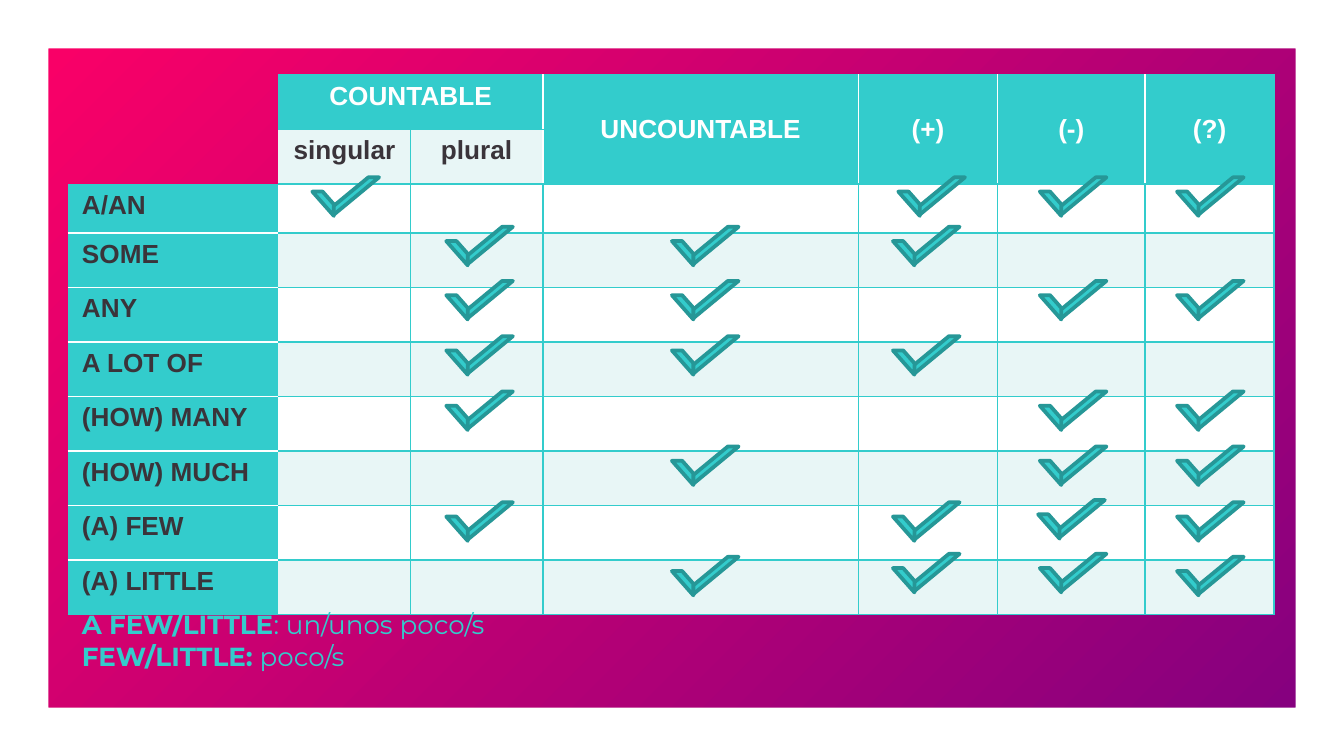
"""Build a quantifier grid slide with check marks for countable and uncountable use."""
from dataclasses import dataclass
from typing import Optional

from lxml.etree import SubElement
from pptx import Presentation
from pptx.dml.color import RGBColor
from pptx.enum.shapes import MSO_SHAPE
from pptx.enum.text import MSO_ANCHOR, MSO_AUTO_SIZE, PP_ALIGN
from pptx.oxml.ns import qn
from pptx.util import Pt

TEAL = RGBColor(0x33, 0xCC, 0xCC)
DARK_TEAL = RGBColor(0x26, 0x97, 0x97)
PALE = RGBColor(0xE8, 0xF6, 0xF6)
WHITE = RGBColor(0xFF, 0xFF, 0xFF)
INK = RGBColor(0x3A, 0x34, 0x3A)
PINK = RGBColor(0xFF, 0x00, 0x66)
PURPLE = RGBColor(0x80, 0x00, 0x80)

WIDTH, HEIGHT = 720, 405
LEFT, TOP = 36.7, 40.1
COL_WIDTHS = [112.5, 70.8, 70.8, 169.2, 74.4, 79.2, 69]
ROW_HEIGHTS = [26.8, 25.2, 26.3] + [29.2] * 7
CHECK_LEFTS = {1: 166.6, 2: 238.3, 3: 359.2, 4: 477.6, 5: 556.3, 6: 629.8}
NO_STYLE = "{2D5ABB26-0587-4C30-8999-92F81FD0307C}"


@dataclass(frozen=True)
class Header:
    text: str
    row: int
    col: int
    rows: int = 1
    cols: int = 1
    fill: RGBColor = TEAL
    color: RGBColor = WHITE
    left: Optional[RGBColor] = WHITE
    right: RGBColor = WHITE


@dataclass(frozen=True)
class Quantifier:
    label: str
    check_top: float
    checks: tuple[int, ...]


HEADERS = [
    Header("COUNTABLE", 0, 1, cols=2, left=None),
    Header("singular", 1, 1, fill=PALE, color=INK, left=None, right=TEAL),
    Header("plural", 1, 2, fill=PALE, color=INK, left=TEAL, right=TEAL),
    Header("UNCOUNTABLE", 0, 3, rows=2),
    Header("(+)", 0, 4, rows=2),
    Header("(-)", 0, 5, rows=2),
    Header("(?)", 0, 6, rows=2, right=TEAL),
]
QUANTIFIERS = [
    Quantifier("A/AN", 95, (1, 4, 5, 6)),
    Quantifier("SOME", 121.5, (2, 3, 4)),
    Quantifier("ANY", 150.5, (2, 3, 5, 6)),
    Quantifier("A LOT OF", 180.1, (2, 3, 4)),
    Quantifier("(HOW) MANY", 209.7, (2, 5, 6)),
    Quantifier("(HOW) MUCH", 239.2, (3, 5, 6)),
    Quantifier("(A) FEW", 269.1, (2, 4, 5, 6)),
    Quantifier("(A) LITTLE", 298.3, (3, 4, 5, 6)),
]
NUDGES = {
    ("A/AN", 4): (2.9, 0),
    ("(A) FEW", 5): (-0.9, -1.2),
    ("(A) LITTLE", 4): (0, -1.6),
    ("(A) LITTLE", 5): (0, -1.6),
}
NOTES = [("A FEW/LITTLE", ": un/unos poco/s"), ("FEW/LITTLE:", " poco/s")]


def style_cell(cell, fill: RGBColor, **borders: Optional[RGBColor]) -> None:
    """Give a cell its borders (keys L, R, T, B) and its fill."""
    tc_pr = cell._tc.get_or_add_tcPr()
    for side in "LRTB":
        color = borders.get(side)
        if color is not None:
            ln = SubElement(tc_pr, qn(f"a:ln{side}"), w=str(Pt(1)))
            solid = SubElement(ln, qn("a:solidFill"))
            SubElement(solid, qn("a:srgbClr"), val=str(color))
    cell.fill.solid()
    cell.fill.fore_color.rgb = fill


def style_paragraph(p, font: str, color: RGBColor) -> None:
    """Set the shared text style of a paragraph."""
    p.font.name, p.font.size = font, Pt(14)
    p.font.color.rgb = color


def write_cell(cell, text: str, color: RGBColor) -> None:
    """Write bold text in a cell."""
    p = cell.text_frame.paragraphs[0]
    p.text = text
    style_paragraph(p, "Arial", color)
    p.font.bold = True


def add_header(table, header: Header) -> None:
    """Write one heading over the cells it spans."""
    last_row, last_col = header.row + header.rows - 1, header.col + header.cols - 1
    for row in range(header.row, last_row + 1):
        for col in range(header.col, last_col + 1):
            style_cell(table.cell(row, col), header.fill,
                       L=header.left, R=header.right, T=TEAL, B=TEAL)
    cell = table.cell(header.row, header.col)
    if header.rows * header.cols > 1:
        cell.merge(table.cell(last_row, last_col))
    if header.rows > 1:
        cell.vertical_anchor = MSO_ANCHOR.MIDDLE
    write_cell(cell, header.text, header.color)
    cell.text_frame.paragraphs[0].alignment = PP_ALIGN.CENTER


def add_grid(s) -> None:
    """Add the table with its headings, labels and banded body."""
    table = s.shapes.add_table(len(ROW_HEIGHTS), len(COL_WIDTHS), Pt(LEFT), Pt(TOP),
                               Pt(sum(COL_WIDTHS)), Pt(sum(ROW_HEIGHTS))).table
    table.first_row = table.horz_banding = False
    table._tbl.tblPr.find(qn("a:tableStyleId")).text = NO_STYLE
    for column, width in zip(table.columns, COL_WIDTHS):
        column.width = Pt(width)
    for row, height in zip(table.rows, ROW_HEIGHTS):
        row.height = Pt(height)
    for row in range(2):
        table.cell(row, 0).fill.background()
    for header in HEADERS:
        add_header(table, header)
    for i, quantifier in enumerate(QUANTIFIERS):
        label = table.cell(i + 2, 0)
        style_cell(label, TEAL, L=TEAL, T=WHITE if i else None,
                   B=WHITE if i < len(QUANTIFIERS) - 1 else TEAL)
        write_cell(label, quantifier.label, INK)
        for col in range(1, len(COL_WIDTHS)):
            cell = table.cell(i + 2, col)
            cell.margin_top = cell.margin_bottom = Pt(0)
            style_cell(cell, PALE if i % 2 else WHITE,
                       L=TEAL if col > 1 else None, R=TEAL, T=TEAL, B=TEAL)


def add_stripe(shapes, left: float, top: float, width: float, height: float,
               adjustment: float, rotation: float = 0) -> None:
    """Add one stroke of a check mark."""
    sp = shapes.add_shape(MSO_SHAPE.DIAGONAL_STRIPE, Pt(left), Pt(top), Pt(width), Pt(height))
    sp.adjustments[0] = adjustment
    sp.rotation = rotation
    sp.shadow.inherit = False
    sp.fill.solid()
    sp.fill.fore_color.rgb = TEAL
    sp.line.color.rgb = DARK_TEAL
    sp.line.width = Pt(2)


def add_check(s, left: float, top: float) -> None:
    """Add a check mark made of two grouped stripes."""
    shapes = s.shapes.add_group_shape().shapes
    add_stripe(shapes, left + 12, top, 24.5, 20.2, 0.767)
    add_stripe(shapes, left, top + 8.4, 13, 11.5, 0.524, 90)


def add_notes_text(s) -> None:
    """Add the translations below the table."""
    tf = s.shapes.add_textbox(Pt(LEFT), Pt(322.6), Pt(234), Pt(41)).text_frame
    tf.word_wrap = False
    tf.auto_size = MSO_AUTO_SIZE.SHAPE_TO_FIT_TEXT
    for i, (term, meaning) in enumerate(NOTES):
        p = tf.add_paragraph() if i else tf.paragraphs[0]
        style_paragraph(p, "Montserrat", TEAL)
        for text, bold in ((term, True), (meaning, False)):
            r = p.add_run()
            r.text, r.font.bold = text, bold


def add_backdrop(s) -> None:
    """Set the gradient background and the white frame around it."""
    fill = s.background.fill
    fill.gradient()
    fill.gradient_angle = 315
    for stop, color in zip(fill.gradient_stops, (PINK, PURPLE)):
        stop.color.rgb = color
    sp = s.shapes.add_shape(MSO_SHAPE.FRAME, Pt(0), Pt(0), Pt(WIDTH), Pt(HEIGHT))
    sp.adjustments[0] = 0.064
    sp.shadow.inherit = False
    sp.fill.solid()
    sp.fill.fore_color.rgb = WHITE
    sp.line.fill.background()


def main() -> None:
    """Build and save the slide."""
    prs = Presentation()
    prs.slide_width, prs.slide_height = Pt(WIDTH), Pt(HEIGHT)
    s = prs.slides.add_slide(prs.slide_layouts[6])
    add_backdrop(s)
    add_grid(s)
    add_notes_text(s)
    for quantifier in QUANTIFIERS:
        for col in quantifier.checks:
            dx, dy = NUDGES.get((quantifier.label, col), (0, 0))
            add_check(s, CHECK_LEFTS[col] + dx, quantifier.check_top + dy)
    prs.save("out.pptx")


if __name__ == "__main__":
    main()
